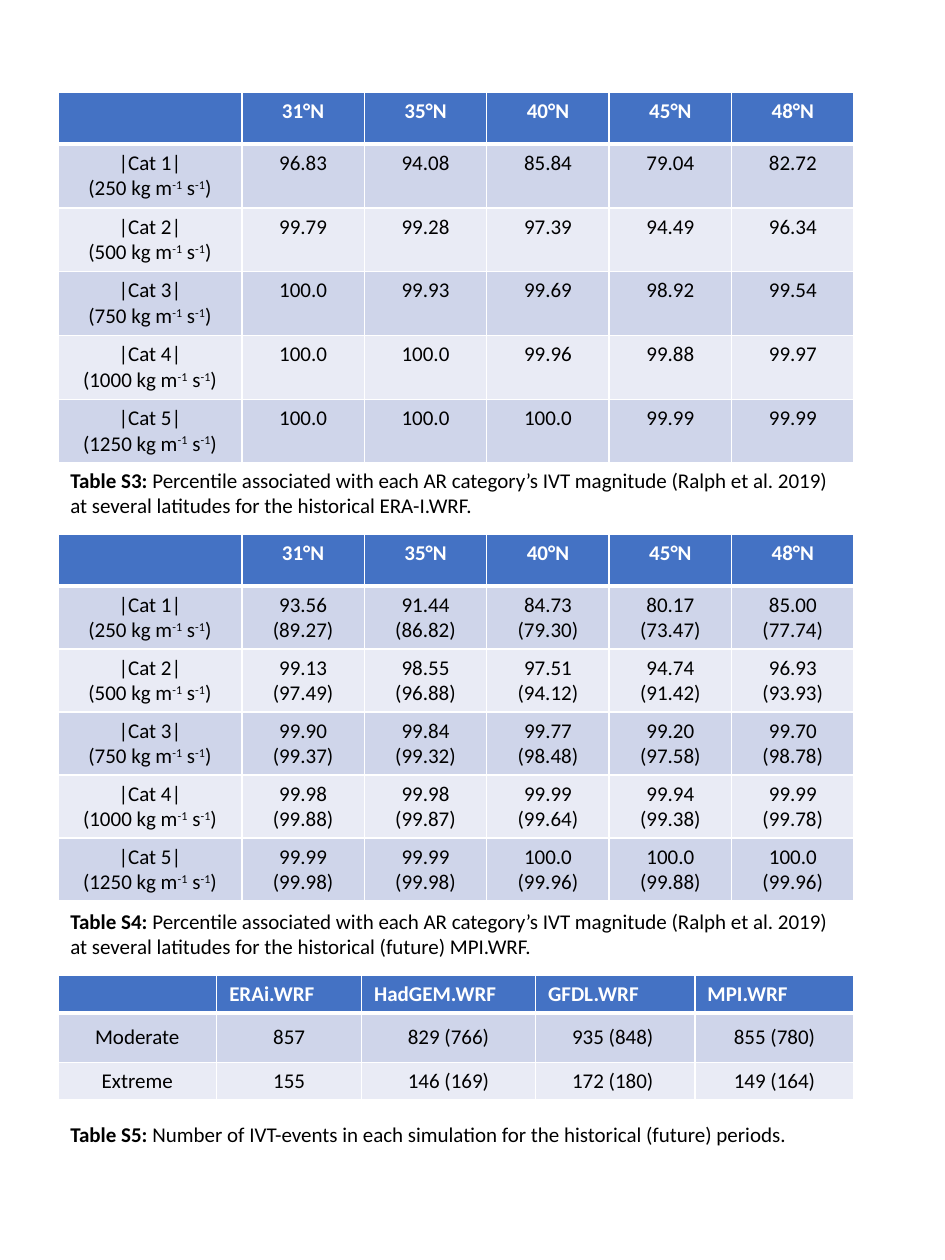
from lxml import etree
from pptx import Presentation
from pptx.dml.color import RGBColor
from pptx.enum import text
from pptx.oxml import ns
from pptx.util import Pt

COLORS = {"header": "4472C4", "odd": "CFD5EA", "even": "E9EBF5",
          "white": "FFFFFF", "black": "000000"}
FONT, SIZE = "Calibri", 12
LEFT, WIDTH = 33.12, 455.04
CENTER, START = text.PP_ALIGN.CENTER, text.PP_ALIGN.LEFT

LATITUDES = ["", "31°N", "35°N", "40°N", "45°N", "48°N"]
THRESHOLDS = [250, 500, 750, 1000, 1250]
ERA_PERCENTILES = [
    ["96.83", "94.08", "85.84", "79.04", "82.72"],
    ["99.79", "99.28", "97.39", "94.49", "96.34"],
    ["100.0", "99.93", "99.69", "98.92", "99.54"],
    ["100.0", "100.0", "99.96", "99.88", "99.97"],
    ["100.0", "100.0", "100.0", "99.99", "99.99"],
]
# Historical value, then future value on its own line
MPI_PERCENTILES = [
    ["93.56\n(89.27)", "91.44\n(86.82)", "84.73\n(79.30)", "80.17\n(73.47)", "85.00\n(77.74)"],
    ["99.13\n(97.49)", "98.55\n(96.88)", "97.51\n(94.12)", "94.74\n(91.42)", "96.93\n(93.93)"],
    ["99.90\n(99.37)", "99.84\n(99.32)", "99.77\n(98.48)", "99.20\n(97.58)", "99.70\n(98.78)"],
    ["99.98\n(99.88)", "99.98\n(99.87)", "99.99\n(99.64)", "99.94\n(99.38)", "99.99\n(99.78)"],
    ["99.99\n(99.98)", "99.99\n(99.98)", "100.0\n(99.96)", "100.0\n(99.88)", "100.0\n(99.96)"],
]
EVENT_COUNTS = [
    ["", "ERAi.WRF", "HadGEM.WRF", "GFDL.WRF", "MPI.WRF"],
    ["Moderate", "857", "829 (766)", "935 (848) ", "855 (780)"],
    ["Extreme", "155", "146 (169)", "172 (180) ", "149 (164)"],
]


def add_run(paragraph, words, color="black", bold=False, raised=False):
    run = paragraph.add_run()
    run.text = words
    run.font.name, run.font.size, run.font.bold = FONT, Pt(SIZE), bold
    run.font.color.rgb = RGBColor.from_string(COLORS[color])
    if raised:
        run.font._element.set("baseline", "30000")


def set_borders(cell, bottom):
    properties = cell._tc.get_or_add_tcPr()
    sides = {"a:lnL": 1, "a:lnR": 1, "a:lnT": 1, "a:lnB": bottom}
    for position, (side, width) in enumerate(sides.items()):
        line = etree.Element(ns.qn(side), w=str(Pt(width)))
        fill = etree.SubElement(line, ns.qn("a:solidFill"))
        etree.SubElement(fill, ns.qn("a:srgbClr"), val=COLORS["white"])
        properties.insert(position, line)


def fill_cell(cell, content, header, align):
    """Write one line per paragraph; '^' switches superscript on and off."""
    for index, line in enumerate(content.split("\n")):
        frame = cell.text_frame
        paragraph = frame.add_paragraph() if index else frame.paragraphs[0]
        paragraph.alignment = align
        for part, words in enumerate(line.split("^")):
            if words:
                add_run(paragraph, words, "white" if header else "black",
                        header, raised=part % 2 == 1)
        if not line:
            etree.SubElement(paragraph._p, ns.qn("a:endParaRPr"), sz=str(SIZE * 100))


def add_data_table(slide, top, rows, widths, heights, header_align, body_anchor):
    grid = slide.shapes.add_table(len(rows), len(widths), Pt(LEFT), Pt(top),
                                  Pt(WIDTH), Pt(sum(heights))).table
    for column, width in zip(grid.columns, widths):
        column.width = Pt(width)
    for r, (row, height) in enumerate(zip(rows, heights)):
        grid.rows[r].height = Pt(height)
        header = r == 0
        color = "header" if header else "odd" if r % 2 else "even"
        for c, content in enumerate(row):
            cell = grid.cell(r, c)
            cell.fill.solid()
            cell.fill.fore_color.rgb = RGBColor.from_string(COLORS[color])
            set_borders(cell, 3 if header else 1)
            if not header:
                cell.vertical_anchor = body_anchor
            fill_cell(cell, content, header, header_align if header else CENTER)


def add_percentile_table(slide, top, percentiles):
    rows = [LATITUDES]
    for number, (threshold, values) in enumerate(zip(THRESHOLDS, percentiles), 1):
        rows.append([f"|Cat {number}|\n({threshold} kg m^-1^ s^-1^)"] + values)
    first = 105.12
    others = (WIDTH - first) / 5
    add_data_table(slide, top, rows, [first] + [others] * 5, [29.5] + [36] * 5,
                   CENTER, text.MSO_ANCHOR.TOP)


def add_event_table(slide, top):
    add_data_table(slide, top, EVENT_COUNTS, [90.72, 82.8, 99.36, 91.08, 91.08],
                   [21.6, 28.1, 21.6], START, text.MSO_ANCHOR.MIDDLE)


def add_caption(slide, top, height, label, words):
    frame = slide.shapes.add_textbox(Pt(LEFT), Pt(top), Pt(WIDTH), Pt(height)).text_frame
    frame.word_wrap = True
    add_run(frame.paragraphs[0], label + ": ", bold=True)
    add_run(frame.paragraphs[0], words)


def main():
    deck = Presentation()
    deck.slide_width, deck.slide_height = Pt(540), Pt(720)
    slide = deck.slides.add_slide(deck.slide_layouts[6])
    magnitude = ("Percentile associated with each AR category’s IVT magnitude "
                 "(Ralph et al. 2019) at several latitudes for the historical ")

    # Percentiles in the reanalysis run
    add_percentile_table(slide, 52.8, ERA_PERCENTILES)
    add_caption(slide, 263.5, 36, "Table S3", magnitude + "ERA-I.WRF.")

    # Percentiles in the historical and future runs
    add_percentile_table(slide, 305.3, MPI_PERCENTILES)
    add_caption(slide, 515.5, 36, "Table S4", magnitude + "(future) MPI.WRF.")

    # Event counts
    add_event_table(slide, 557.3)
    add_caption(slide, 637.2, 21.6, "Table S5", "Number of IVT-events in each simulation "
                "for the historical (future) periods.")
    deck.save("out.pptx")


if __name__ == "__main__":
    main()
